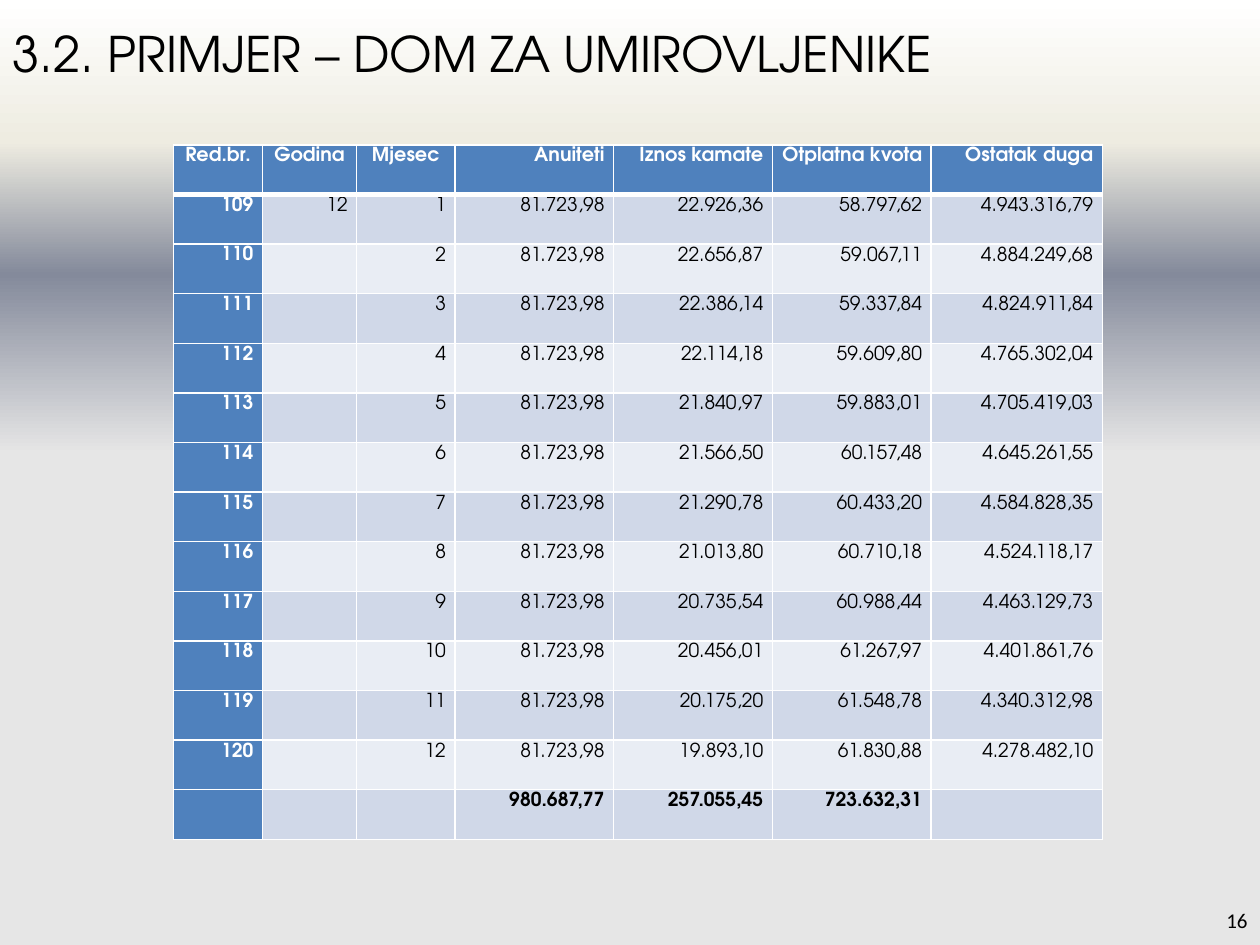
from dataclasses import dataclass

from lxml.etree import SubElement
from pptx import Presentation
from pptx.dml.color import RGBColor
from pptx.enum.text import MSO_ANCHOR, MSO_AUTO_SIZE, PP_ALIGN
from pptx.oxml.ns import qn
from pptx.util import Cm, Pt

TITLE_FONT = "TeX Gyre Adventor"
WHITE, BLACK, BLUE = "FFFFFF", "000000", "4F81BD"
BANDS = ("D0D8E8", "E9EDF4")
BACKGROUND_STOPS = ((0, WHITE), (15, "EEECE1"), (29, "848A9B"),
                    (48, "E6E6E6"), (100, "E6E6E6"))
ROW_HEIGHT = 1.0
ANNUITY = "81.723,98"
FIRST_NUMBER = 109


@dataclass(frozen=True)
class Column:
    heading: str
    width: float
    heading_align: PP_ALIGN = PP_ALIGN.RIGHT


@dataclass(frozen=True)
class Instalment:
    interest: str
    principal: str
    balance: str


COLUMNS = (
    Column("Red.br.", 1.79, PP_ALIGN.CENTER),
    Column("Godina", 1.9, PP_ALIGN.CENTER),
    Column("Mjesec", 1.98, PP_ALIGN.CENTER),
    Column("Anuiteti", 3.2),
    Column("Iznos kamate", 3.2),
    Column("Otplatna kvota", 3.2),
    Column("Ostatak duga", 3.45),
)
INSTALMENTS = (
    Instalment("22.926,36", "58.797,62", "4.943.316,79"),
    Instalment("22.656,87", "59.067,11", "4.884.249,68"),
    Instalment("22.386,14", "59.337,84", "4.824.911,84"),
    Instalment("22.114,18", "59.609,80", "4.765.302,04"),
    Instalment("21.840,97", "59.883,01", "4.705.419,03"),
    Instalment("21.566,50", "60.157,48", "4.645.261,55"),
    Instalment("21.290,78", "60.433,20", "4.584.828,35"),
    Instalment("21.013,80", "60.710,18", "4.524.118,17"),
    Instalment("20.735,54", "60.988,44", "4.463.129,73"),
    Instalment("20.456,01", "61.267,97", "4.401.861,76"),
    Instalment("20.175,20", "61.548,78", "4.340.312,98"),
    Instalment("19.893,10", "61.830,88", "4.278.482,10"),
)
TOTALS = ("", "", "", "980.687,77", "257.055,45", "723.632,31", "")


def rgb(color: str) -> RGBColor:
    return RGBColor.from_string(color)


def write(para, text: str, *, size: float, font: str = TITLE_FONT,
          color: str = BLACK, bold: bool = False, align=PP_ALIGN.LEFT) -> None:
    para.alignment = align
    span = para.add_run()
    span.text = text
    span.font.name = font
    span.font.size = Pt(size)
    span.font.bold = bold
    span.font.color.rgb = rgb(color)


def paint_background(page) -> None:
    fill = page.background.fill
    fill.gradient()
    fill.gradient_angle = 270  # counter-clockwise, so top to bottom
    stops = page.element.find(".//" + qn("a:gsLst"))
    for stop in list(stops):
        stops.remove(stop)
    for percent, color in BACKGROUND_STOPS:
        stop = SubElement(stops, qn("a:gs"), pos=str(percent * 1000))
        SubElement(stop, qn("a:srgbClr"), val=color)


def add_borders(cell, *, bottom: float) -> None:
    properties = cell._tc.get_or_add_tcPr()
    for side, width in (("L", 1), ("R", 1), ("T", 1), ("B", bottom)):
        line = SubElement(properties, qn(f"a:ln{side}"), w=str(Pt(width)))
        fill = SubElement(line, qn("a:solidFill"))
        SubElement(fill, qn("a:srgbClr"), val=WHITE)


def format_cell(cell, text: str, *, fill: str, bottom: float = 1, **text_format) -> None:
    add_borders(cell, bottom=bottom)
    cell.fill.solid()
    cell.fill.fore_color.rgb = rgb(fill)
    cell.margin_left = cell.margin_right = Cm(0.18)
    cell.margin_top = cell.margin_bottom = 0
    if text:
        para = cell.text_frame.paragraphs[0]
        para.line_spacing = 1.15
        para.space_after = Pt(10)
        write(para, text, size=11, **text_format)


def schedule_rows() -> list[tuple[str, ...]]:
    rows = [
        (str(FIRST_NUMBER + index), "" if index else "12", str(index + 1), ANNUITY,
         item.interest, item.principal, item.balance)
        for index, item in enumerate(INSTALMENTS)
    ]
    return rows + [TOTALS]


def add_schedule(page) -> None:
    rows = schedule_rows()
    width = sum(column.width for column in COLUMNS)
    height = ROW_HEIGHT * (len(rows) + 1)
    table = page.shapes.add_table(len(rows) + 1, len(COLUMNS), Cm(3.5), Cm(2.92),
                                  Cm(width), Cm(height)).table
    for row in table.rows:
        row.height = Cm(ROW_HEIGHT)
    for index, column in enumerate(COLUMNS):
        table.columns[index].width = Cm(column.width)
        format_cell(table.cell(0, index), column.heading, fill=BLUE, bottom=3,
                    color=WHITE, bold=True, align=column.heading_align)
    for number, values in enumerate(rows):
        for index, value in enumerate(values):
            is_label = index == 0
            format_cell(table.cell(number + 1, index), value,
                        fill=BLUE if is_label else BANDS[number % 2],
                        color=WHITE if is_label else BLACK,
                        bold=is_label or values is TOTALS, align=PP_ALIGN.RIGHT)


def add_title(page, text: str) -> None:
    title = page.shapes.title
    title.left, title.top, title.width, title.height = Cm(0), Cm(-0.53), Cm(25.1), Cm(3.18)
    frame = title.text_frame
    frame.auto_size = MSO_AUTO_SIZE.NONE
    frame.vertical_anchor = MSO_ANCHOR.MIDDLE
    write(frame.paragraphs[0], text, size=28)


def add_page_number(page, text: str) -> None:
    box = page.shapes.add_textbox(Cm(24.08), Cm(18.03), Cm(1.32), Cm(1.02))
    frame = box.text_frame
    frame.word_wrap = True
    frame.vertical_anchor = MSO_ANCHOR.MIDDLE
    write(frame.paragraphs[0], text, size=12, font="Calibri", align=PP_ALIGN.RIGHT)


def main() -> None:
    deck = Presentation()
    deck.slide_width, deck.slide_height = Cm(25.4), Cm(19.05)
    page = deck.slides.add_slide(deck.slide_layouts[5])
    paint_background(page)
    add_page_number(page, "16")
    add_title(page, "3.2. PRIMJER – DOM ZA UMIROVLJENIKE")
    add_schedule(page)
    deck.save("out.pptx")


if __name__ == "__main__":
    main()
